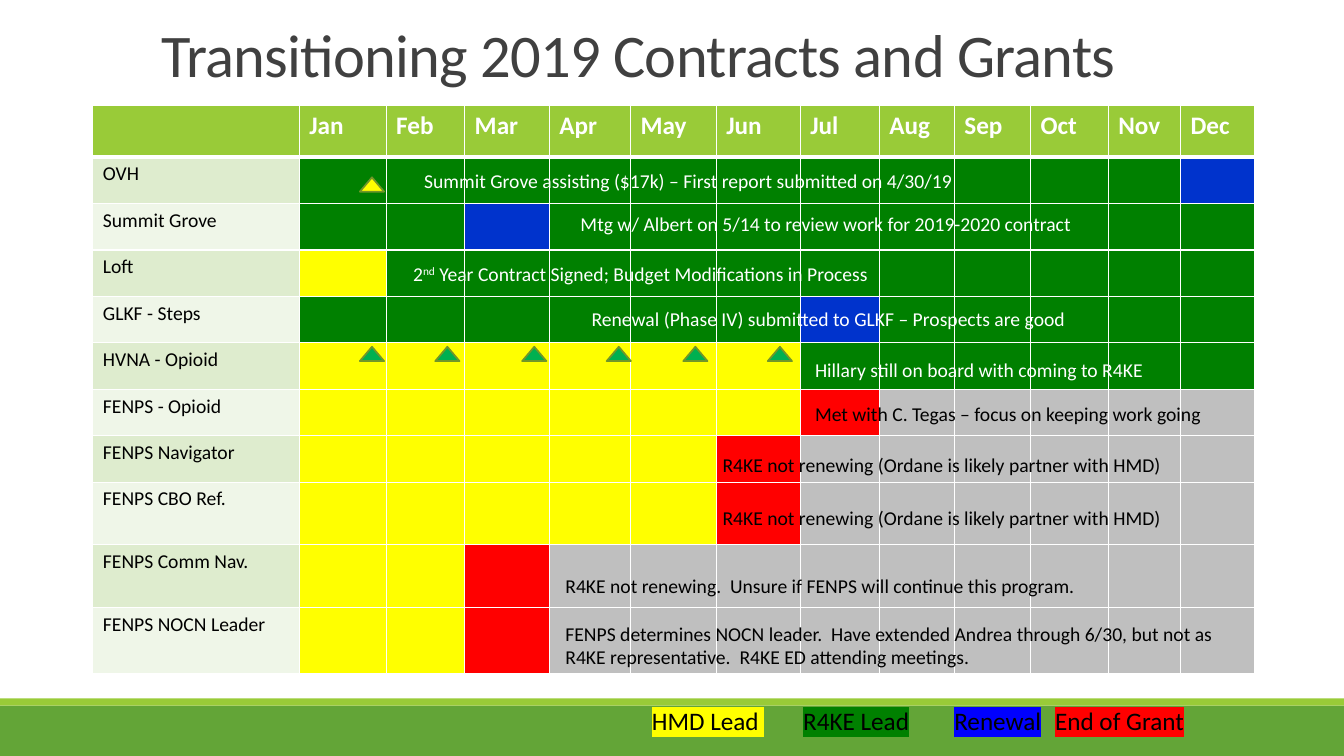
from dataclasses import dataclass
from typing import NamedTuple

from lxml.etree import SubElement
from pptx import Presentation
from pptx.dml.color import RGBColor
from pptx.enum.shapes import MSO_SHAPE as Preset
from pptx.enum.text import MSO_ANCHOR as Anchor, MSO_AUTO_SIZE as AutoSize, PP_ALIGN as Align
from pptx.oxml.ns import qn
from pptx.util import Cm, Pt


@dataclass(frozen=True)
class Theme:
    font: str = "Calibri"
    title_size: float = 43.2
    heading_size: float = 18
    body_size: float = 14
    title: str = "404040"
    black: str = "000000"
    white: str = "FFFFFF"
    lime: str = "99CB38"
    leaf: str = "63A537"
    outline: str = "719629"
    bands: tuple[str, str] = ("DEECCE", "EFF6E8")
    yellow: str = "FFFF00"
    green: str = "008000"
    blue: str = "0033CC"
    legend_blue: str = "0000FF"
    red: str = "FF0000"
    gray: str = "BFBFBF"
    report_green: str = "00B050"


THEME = Theme()
# H and S: led by one of the two partners, R: renewal, E: end of grant, -: over
STATUS = {"H": THEME.yellow, "S": THEME.green, "R": THEME.blue, "E": THEME.red, "-": THEME.gray}


class Box(NamedTuple):
    left: float
    top: float
    width: float
    height: float

    def lengths(self) -> list[Cm]:
        return [Cm(value) for value in self]


class Contract(NamedTuple):
    name: str
    months: str  # one STATUS key per month
    height: float = 1.17


class Piece(NamedTuple):
    text: str
    highlight: str | None = None
    raised: bool = False


class Note(NamedTuple):
    box: Box
    color: str
    pieces: list[Piece]


class Marker(NamedTuple):
    left: float
    top: float
    color: str


MONTHS = "Jan Feb Mar Apr May Jun Jul Aug Sep Oct Nov Dec".split()
COLUMN_WIDTHS = [5.2, 2.19, 1.98, 2.13, 2.05, 2.16, 2.12, 1.99, 1.89, 1.92, 1.96, 1.82, 1.87]
HEADER_HEIGHT = 1.3
CONTRACTS = [
    Contract("OVH", "S" * 11 + "R"),
    Contract("Summit Grove", "SSR" + "S" * 9),
    Contract("Loft", "H" + "S" * 11),
    Contract("GLKF - Steps", "S" * 6 + "R" + "S" * 5),
    Contract("HVNA - Opioid", "H" * 6 + "S" * 6),
    Contract("FENPS - Opioid", "H" * 6 + "E" + "-" * 5),
    Contract("FENPS Navigator", "H" * 5 + "E" + "-" * 6),
    Contract("FENPS CBO Ref.", "H" * 5 + "E" + "-" * 6, 1.57),
    Contract("FENPS Comm Nav.", "HHE" + "-" * 9, 1.59),
    Contract("FENPS NOCN Leader", "HHE" + "-" * 9, 1.66),
]
MARKERS = [Marker(9.07, 4.47, THEME.yellow)] + [
    Marker(left, 8.74, THEME.report_green) for left in (9.07, 10.97, 13.16, 15.29, 17.22, 19.35)
]
NOT_RENEWING = "R4KE not renewing (Ordane is likely partner with HMD)"
NOTES = [
    Note(Box(10.44, 4.14, 18.42, 0.86), THEME.white,
         [Piece("Summit Grove assisting ($17k) – First report submitted on 4/30/19")]),
    Note(Box(14.38, 5.21, 17.55, 0.86), THEME.white,
         [Piece("Mtg w/ Albert on 5/14 to review work for 2019-2020 contract")]),
    Note(Box(10.16, 6.48, 17.55, 0.86), THEME.white,
         [Piece("2"), Piece("nd", raised=True),
          Piece(" Year Contract Signed; Budget Modifications in Process")]),
    Note(Box(14.66, 7.62, 17.55, 0.86), THEME.white,
         [Piece("Renewal (Phase IV) submitted to GLKF – Prospects are good")]),
    Note(Box(20.29, 8.89, 11.25, 0.86), THEME.white,
         [Piece("Hillary still on board with coming to R4KE")]),
    Note(Box(20.29, 10.01, 11.33, 0.86), THEME.black,
         [Piece("Met with C. Tegas – focus on keeping work going")]),
    Note(Box(17.96, 11.28, 13.67, 0.86), THEME.black, [Piece(NOT_RENEWING)]),
    Note(Box(17.96, 12.62, 13.67, 0.86), THEME.black, [Piece(NOT_RENEWING)]),
    Note(Box(14, 14.33, 17.55, 0.86), THEME.black,
         [Piece("R4KE not renewing.  Unsure if FENPS will continue this program.")]),
    Note(Box(14, 15.54, 17.55, 1.45), THEME.black,
         [Piece("FENPS determines NOCN leader.  Have extended Andrea through 6/30, "
                "but not as R4KE representative.  R4KE ED attending meetings.")]),
]
LEGEND = Note(Box(16.18, 17.65, 16.21, 1.02), THEME.black, [
    Piece("HMD Lead ", THEME.yellow), Piece("\t"),
    Piece("R4KE Lead", THEME.green), Piece("\t"),
    Piece("Renewal", THEME.legend_blue), Piece("\t"),
    Piece("End of Grant", THEME.red),
])
LEGEND_TABS = [3.81, 7.62, 10.16]


def add_run(paragraph, piece: Piece, size: float, color: str, bold: bool = False):
    run = paragraph.add_run()
    run.text = piece.text
    font = run.font
    font.size, font.bold = Pt(size), bold
    font.color.rgb = RGBColor.from_string(color)
    properties = run._r.get_or_add_rPr()
    if piece.highlight:
        highlight = SubElement(properties, qn("a:highlight"))
        SubElement(highlight, qn("a:srgbClr"), val=piece.highlight)
    if piece.raised:
        properties.set("baseline", "30000")
    font.name = THEME.font
    return run


def add_title(slide, text: str) -> None:
    title = slide.shapes.title
    title.left, title.top, title.width, title.height = Box(3.81, 0.53, 27.81, 1.85).lengths()
    frame = title.text_frame
    frame.auto_size, frame.vertical_anchor = AutoSize.NONE, Anchor.BOTTOM
    paragraph = frame.paragraphs[0]
    paragraph.alignment, paragraph.line_spacing = Align.LEFT, 0.85
    run = add_run(paragraph, Piece(text), THEME.title_size, THEME.title)
    run._r.get_or_add_rPr().set("spc", "-50")


def add_shape(slide, preset: Preset, box: Box, fill: str, outline: str | None = None) -> None:
    shape = slide.shapes.add_shape(preset, *box.lengths())
    shape.shadow.inherit = False
    shape.fill.solid()
    shape.fill.fore_color.rgb = RGBColor.from_string(fill)
    if outline:
        shape.line.color.rgb = RGBColor.from_string(outline)
        shape.line.width = Pt(1.25)
    else:
        shape.line.fill.background()


def add_note(slide, note: Note, size: float):
    frame = slide.shapes.add_textbox(*note.box.lengths()).text_frame
    frame.word_wrap = True
    paragraph = frame.paragraphs[0]
    for piece in note.pieces:
        add_run(paragraph, piece, size, note.color)
    return paragraph


def add_legend(slide) -> None:
    paragraph = add_note(slide, LEGEND, THEME.heading_size)
    tabs = SubElement(paragraph._p.get_or_add_pPr(), qn("a:tabLst"))
    for position in LEGEND_TABS:
        SubElement(tabs, qn("a:tab"), pos=str(Cm(position)), algn="l")


def format_cell(cell, fill: str, row: int) -> None:
    """Draw white borders, thick below the header, then fill the cell."""
    properties = cell._tc.get_or_add_tcPr()
    thick_side = {0: "B", 1: "T"}.get(row)
    for side in "LRTB":
        width = Pt(3 if side == thick_side else 1)
        line = SubElement(properties, qn(f"a:ln{side}"), w=str(width))
        SubElement(SubElement(line, qn("a:solidFill")), qn("a:srgbClr"), val=THEME.white)
    cell.fill.solid()
    cell.fill.fore_color.rgb = RGBColor.from_string(fill)


def add_schedule(slide) -> None:
    heights = [HEADER_HEIGHT] + [contract.height for contract in CONTRACTS]
    box = Box(2.34, 2.66, sum(COLUMN_WIDTHS), sum(heights))
    table = slide.shapes.add_table(len(heights), len(COLUMN_WIDTHS), *box.lengths()).table
    table.first_row = table.horz_banding = False
    for column, width in zip(table.columns, COLUMN_WIDTHS):
        column.width = Cm(width)
    for row, height in zip(table.rows, heights):
        row.height = Cm(height)

    for index in range(len(COLUMN_WIDTHS)):
        cell = table.cell(0, index)
        format_cell(cell, THEME.lime, 0)
        if index:
            add_run(cell.text_frame.paragraphs[0], Piece(MONTHS[index - 1]),
                    THEME.heading_size, THEME.white, bold=True)
    for row, contract in enumerate(CONTRACTS, start=1):
        name_cell = table.cell(row, 0)
        format_cell(name_cell, THEME.bands[(row - 1) % 2], row)
        add_run(name_cell.text_frame.paragraphs[0], Piece(contract.name),
                THEME.body_size, THEME.black)
        for month, status in enumerate(contract.months, start=1):
            format_cell(table.cell(row, month), STATUS[status], row)


def main() -> None:
    presentation = Presentation()
    presentation.slide_width, presentation.slide_height = Cm(33.87), Cm(19.05)
    slide = presentation.slides.add_slide(presentation.slide_layouts[5])
    add_shape(slide, Preset.RECTANGLE, Box(0, 17.78, 33.87, 1.27), THEME.leaf)
    add_shape(slide, Preset.RECTANGLE, Box(0, 17.6, 33.87, 0.18), THEME.lime)
    add_title(slide, "Transitioning 2019 Contracts and Grants")
    add_schedule(slide)
    add_legend(slide)
    for marker in MARKERS:
        box = Box(marker.left, marker.top, 0.61, 0.36)
        add_shape(slide, Preset.ISOSCELES_TRIANGLE, box, marker.color, THEME.outline)
    for note in NOTES:
        add_note(slide, note, THEME.body_size)
    presentation.save("out.pptx")


if __name__ == "__main__":
    main()
